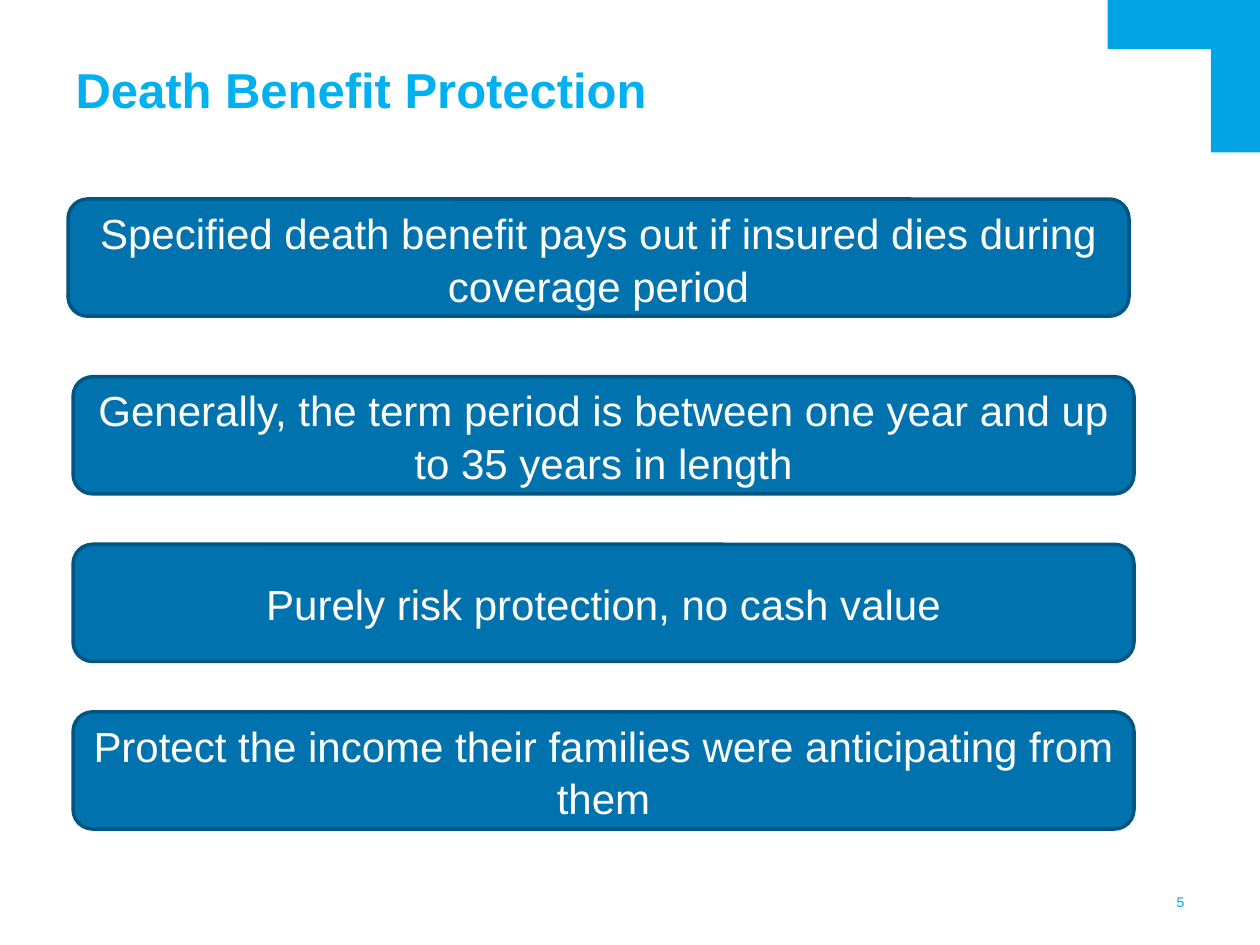
from pptx import Presentation
from pptx import util as u
from pptx.dml.color import RGBColor
from pptx.enum import shapes, text

WIDE, HIGH = 10, 7.5
TITLE = "Death Benefit Protection"
PAGE = "5"
FIRST = "Specified death benefit pays out if insured dies during coverage period"
POINTS = [
    "Generally, the term period is between one year and up to 35 years in length",
    "Purely risk protection, no cash value",
    "Protect the income their families were anticipating from them",
]
HUES = {"sky": "00A4E4", "title": "00B0F0", "fill": "0073AE",
        "edge": "005581", "white": "FFFFFF"}
BAND, ARM = 0.39, 1.21           # corner mark: thickness and length
BOX = (8.42, 0.93)               # width and height of a point
LEFT, TOP, STEP = 0.58, 2.99, 1.33


def hue(name):
    return RGBColor.from_string(HUES[name])


def write(shape, words, size, color, align, anchor, bold=False, inset=None, space=1):
    frame = shape.text_frame
    frame.text = words
    look = {"word_wrap": True, "vertical_anchor": anchor,
            "auto_size": text.MSO_AUTO_SIZE.NONE}
    if inset is not None:
        for side in ("left", "right", "top", "bottom"):
            look["margin_" + side] = u.Inches(inset)
    for key, value in look.items():
        setattr(frame, key, value)
    para = frame.paragraphs[0]
    para.alignment, para.line_spacing = align, space
    for key, value in {"name": "Arial", "size": u.Pt(size), "bold": bold}.items():
        setattr(para.font, key, value)
    para.font.color.rgb = hue(color)


def block(slide, kind, area, fill, edge=None):
    shape = slide.shapes.add_shape(kind, *map(u.Inches, area))
    shape.shadow.inherit = False
    shape.fill.solid()
    shape.fill.fore_color.rgb = hue(fill)
    if edge:
        shape.line.color.rgb = hue(edge)
        shape.line.width = u.Pt(2)
    else:
        shape.line.fill.background()
    return shape


def main():
    deck = Presentation()
    deck.slide_width, deck.slide_height = u.Inches(WIDE), u.Inches(HIGH)
    slide = deck.slides.add_slide(deck.slide_layouts[5])
    kind, side, mid = shapes.MSO_SHAPE, text.PP_ALIGN, text.MSO_ANCHOR.MIDDLE

    for wide, high in ((ARM, BAND), (BAND, ARM)):
        block(slide, kind.RECTANGLE, (WIDE - wide, 0, wide, high), "sky")

    title = slide.shapes.title
    spot = {"left": 0.6, "top": 0.6, "width": 8.8, "height": 0.34}
    for key, value in spot.items():
        setattr(title, key, u.Inches(value))
    write(title, TITLE, 28, "title", side.LEFT, text.MSO_ANCHOR.BOTTOM,
          bold=True, inset=0)

    rows = [(0.54, 1.58, FIRST)]
    rows += [(LEFT, TOP + i * STEP, words) for i, words in enumerate(POINTS)]
    for left, top, words in rows:
        box = block(slide, kind.ROUNDED_RECTANGLE, (left, top, *BOX), "fill", "edge")
        write(box, words, 24, "white", side.CENTER, mid, space=1.05)

    page = slide.shapes.add_textbox(*map(u.Inches, (9.09, 7.09, 0.31, 0.14)))
    write(page, PAGE, 8, "sky", side.RIGHT, mid, inset=0)
    deck.save("out.pptx")


if __name__ == "__main__":
    main()
